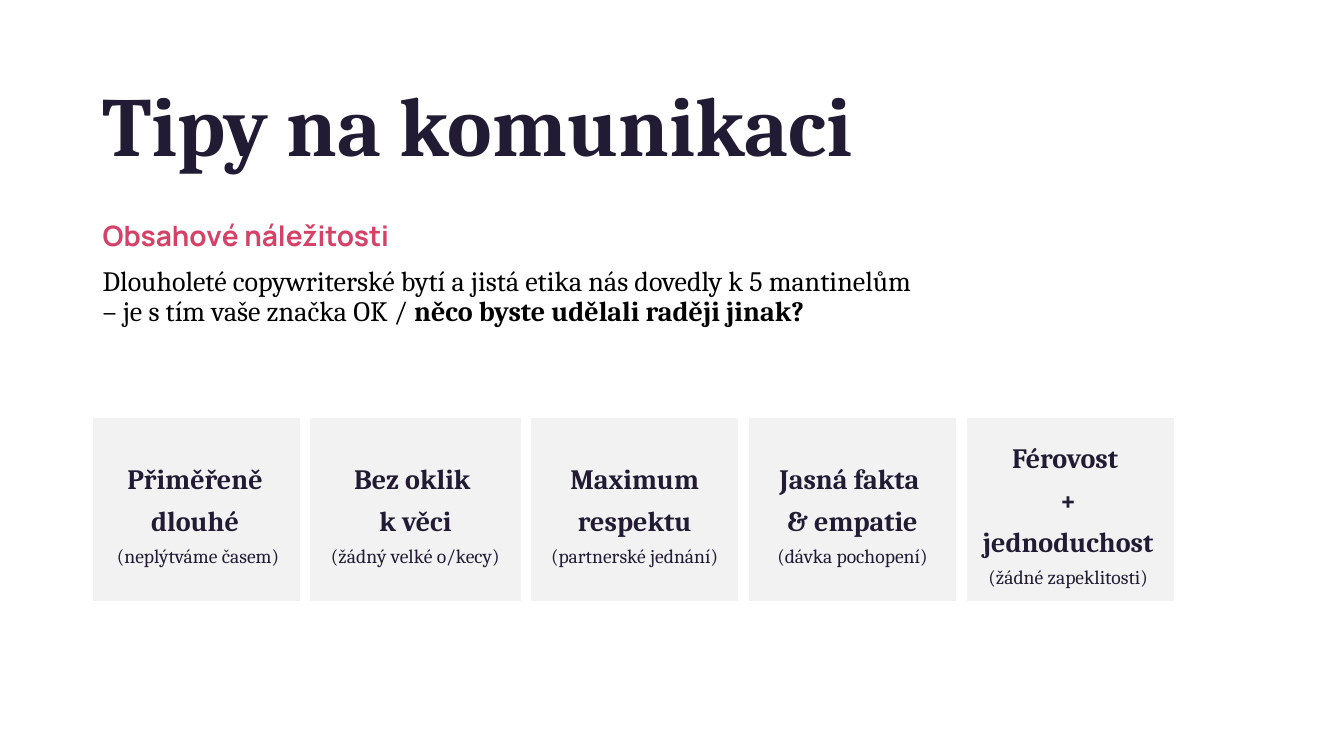
from lxml.etree import SubElement
from pptx import Presentation
from pptx.dml.color import RGBColor
from pptx.enum.text import MSO_ANCHOR as Anchor, PP_ALIGN as Align
from pptx.oxml.ns import qn
from pptx.util import Inches, Pt

SERIF = "Cambria"
SANS = "Manrope"
DARK = "211C33"
PINK = "D54267"
BLACK = "000000"
WHITE = "FFFFFF"
GREY = "F2F2F2"


def color(value):
    return RGBColor.from_string(value)


class SlideBuilder:
    border_width = Pt(6)

    def __init__(self, slide):
        self.slide = slide

    def add_run(self, paragraph, text, size, ink, bold=False, font=SERIF):
        for index, line in enumerate(text.split("\n")):
            if index:
                paragraph.add_line_break()
            if line:
                run = paragraph.add_run()
                run.text = line
                run.font.name = font
                run.font.size = Pt(size)
                run.font.bold = bold
                run.font.color.rgb = color(ink)

    def add_text(self, left, top, width, height, paragraphs, anchor=Anchor.TOP):
        shape = self.slide.shapes.add_textbox(
            Inches(left), Inches(top), Inches(width), Inches(height))
        frame = shape.text_frame
        frame.word_wrap = True
        frame.vertical_anchor = anchor
        for index, runs in enumerate(paragraphs):
            paragraph = frame.add_paragraph() if index else frame.paragraphs[0]
            paragraph.line_spacing = 0.9
            if index:
                paragraph.space_before = Pt(10)
            for run in runs:
                self.add_run(paragraph, *run)

    def add_borders(self, cell, sides):
        properties = cell._tc.get_or_add_tcPr()
        for side in "LRTB":
            line = SubElement(properties, qn(f"a:ln{side}"))
            if side in sides:
                line.set("w", str(self.border_width))
                fill = SubElement(line, qn("a:solidFill"))
                SubElement(fill, qn("a:srgbClr")).set("val", WHITE)
            else:
                SubElement(line, qn("a:noFill"))

    def add_card(self, left, top, width, height, heading, note, sides):
        table = self.slide.shapes.add_table(
            1, 1, Inches(left), Inches(top), Inches(width), Inches(height)).table
        table.first_row = False
        table.horz_banding = False
        cell = table.cell(0, 0)
        self.add_borders(cell, sides)
        cell.fill.solid()
        cell.fill.fore_color.rgb = color(GREY)
        cell.vertical_anchor = Anchor.MIDDLE
        paragraph = cell.text_frame.paragraphs[0]
        paragraph.alignment = Align.CENTER
        paragraph.line_spacing = 1.3
        self.add_run(paragraph, heading + "\n", 20, DARK, True)
        self.add_run(paragraph, note, 14, DARK)


def main():
    presentation = Presentation()
    presentation.slide_width = Inches(13.33)
    presentation.slide_height = Inches(7.5)
    slide = presentation.slides.add_slide(presentation.slide_layouts[6])
    builder = SlideBuilder(slide)

    margin = 0.92
    builder.add_text(margin, 0.71, 11.5, 1.14,
                     [[("Tipy na komunikaci", 60, DARK, True)]], Anchor.MIDDLE)
    builder.add_text(margin, 2.16, 11.5, 1.3, [
        [("Obsahové náležitosti", 20, PINK, True, SANS)],
        [("Dlouholeté copywriterské bytí a jistá etika nás dovedly k 5 mantinelům \n"
          "– je s tím vaše značka OK / ", 20, BLACK),
         ("něco byste udělali raději jinak?", 20, BLACK, True)],
    ])

    cards = [
        (2.09, "Přiměřeně \ndlouhé ", "(neplýtváme časem)", "RB"),
        (2.16, "Bez oklik \nk věci", "(žádný velké o/kecy)", "LRB"),
        (2.13, "Maximum respektu", "(partnerské jednání)", "LRB"),
        (2.13, "Jasná fakta \n& empatie", "(dávka pochopení)", "LRB"),
        (2.09, "Férovost \n+ jednoduchost", "(žádné zapeklitosti)", "LB"),
    ]
    gap = 0.03
    left = margin
    for width, heading, note, sides in cards:
        builder.add_card(left, 4.15, width, 1.85, heading, note, sides)
        left += width + gap

    presentation.save("out.pptx")


if __name__ == "__main__":
    main()
